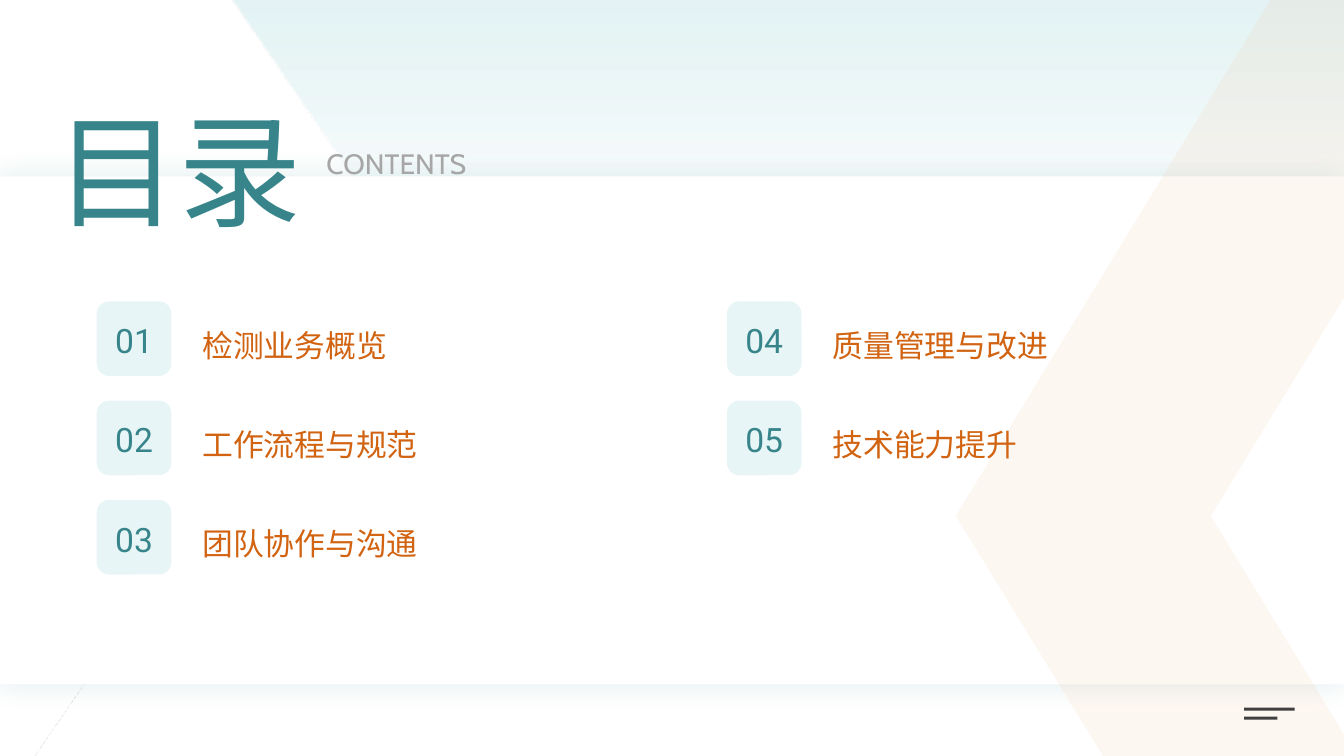
import pptx
import pptx.dml.color
import pptx.enum.shapes
import pptx.enum.text
import pptx.oxml
import pptx.oxml.ns
import pptx.util
import lxml.etree

Inches = pptx.util.Inches
Pt = pptx.util.Pt
RGBColor = pptx.dml.color.RGBColor
MSO_SHAPE = pptx.enum.shapes.MSO_SHAPE
MSO_ANCHOR = pptx.enum.text.MSO_ANCHOR
PP_ALIGN = pptx.enum.text.PP_ALIGN
qn = pptx.oxml.ns.qn

WHITE = RGBColor(0xFF, 0xFF, 0xFF)
TEAL = RGBColor(0x37, 0x85, 0x8B)
MIST = RGBColor(0xD2, 0xEB, 0xED)
BADGE = RGBColor(0xE8, 0xF5, 0xF6)
PEACH = RGBColor(0xF6, 0xBF, 0x96)
ORANGE = RGBColor(0xD1, 0x63, 0x11)
GREY = RGBColor(0xA6, 0xA6, 0xA6)
DARK = RGBColor(0x40, 0x40, 0x40)


def paint(shape, color, *opacities):
    shape.shadow.inherit = False
    shape.line.fill.background()
    if color is not None:
        shape.fill.solid()
        shape.fill.fore_color.rgb = color
    for tint, opacity in zip(shape.element.spPr.iter(qn("a:srgbClr")), opacities):
        lxml.etree.SubElement(tint, qn("a:alpha"), val=str(opacity * 1000))


def write(shape, text, font_name, size, color, spacing, anchor, alignment=PP_ALIGN.LEFT):
    frame = shape.text_frame
    frame.text = text
    frame.word_wrap = True
    frame.auto_size = pptx.enum.text.MSO_AUTO_SIZE.NONE
    frame.vertical_anchor = anchor
    paragraph = frame.paragraphs[0]
    paragraph.alignment = alignment
    paragraph.line_spacing = spacing
    paragraph.font.name = font_name
    paragraph.font.size = Pt(size)
    paragraph.font.color.rgb = color


presentation = pptx.Presentation()
presentation.slide_width = Inches(13.33)
presentation.slide_height = Inches(7.5)
slide = presentation.slides.add_slide(presentation.slide_layouts[5])
shapes = slide.shapes

backdrop_points = [(13.33, 0), (2.3, 0), (3.9, 2.34), (0.36, 7.5), (0.12, 7.5), (13.33, 7.5)]
chevron_points = [(15.13, 0), (12.6, 0), (9.48, 5.12), (10.94, 7.5), (13.46, 7.5), (12.01, 5.12)]
outlines = []
for points in (backdrop_points, chevron_points):
    corners = [(Inches(x), Inches(y)) for x, y in points]
    builder = shapes.build_freeform(*corners[0])
    builder.add_line_segments(corners[1:], close=True)
    outlines.append(builder.convert_to_shape())
backdrop, chevron = outlines

backdrop.fill.gradient()
backdrop.fill.gradient_angle = 270
for stop, position, color in zip(backdrop.fill.gradient_stops, (0, 0.3), (MIST, WHITE)):
    stop.position = position
    stop.color.rgb = color
paint(backdrop, None, 60, 80)

panel = shapes.add_shape(MSO_SHAPE.RECTANGLE, 0, Inches(1.75), Inches(13.33), Inches(5.04))
paint(panel, WHITE)
effects = panel.element.spPr.find(qn("a:effectLst"))
glow = lxml.etree.SubElement(
    effects, qn("a:outerShdw"), blurRad=str(Pt(20)), dist="0", dir="0", algn="ctr", rotWithShape="0"
)
glow_color = lxml.etree.SubElement(glow, qn("a:srgbClr"), val=str(TEAL))
lxml.etree.SubElement(glow_color, qn("a:alpha"), val="15000")

paint(chevron, PEACH, 12)
panel.element.addnext(chevron.element)

title = shapes.title
title.left, title.top = Inches(0.45), Inches(0.74)
title.width, title.height = Inches(2.68), Inches(1.68)
write(title, "目录", "Roboto", 88, TEAL, 1.1, MSO_ANCHOR.TOP)
chevron.element.addnext(title.element)

subtitle = shapes.add_textbox(Inches(3.14), Inches(1.29), Inches(2.23), Inches(0.52))
write(subtitle, "CONTENTS", "Cabin", 20, GREY, 1.35, MSO_ANCHOR.TOP)

for top, width in ((7.02, 0.5), (7.11, 0.33)):
    bar = shapes.add_shape(
        MSO_SHAPE.RECTANGLE, Inches(12.34), Inches(top), Inches(width), Inches(0.03)
    )
    paint(bar, DARK)

chapters = ["检测业务概览", "工作流程与规范", "团队协作与沟通", "质量管理与改进", "技术能力提升"]
for index, chapter in enumerate(chapters):
    column, row = divmod(index, 3)
    left = 0.96 + 6.25 * column
    top = 2.99 + 0.985 * row
    badge = shapes.add_shape(
        MSO_SHAPE.ROUNDED_RECTANGLE, Inches(left), Inches(top), Inches(0.74), Inches(0.74)
    )
    paint(badge, BADGE)
    label = shapes.add_textbox(Inches(left + 0.95), Inches(top - 0.05), Inches(4.43), Inches(0.85))
    write(label, chapter, "Roboto", 22, ORANGE, 1.3, MSO_ANCHOR.MIDDLE)
    number = shapes.add_textbox(Inches(left), Inches(top + 0.08), Inches(0.74), Inches(0.57))
    write(number, f"{index + 1:02}", "Roboto", 24, TEAL, 1.1, MSO_ANCHOR.MIDDLE, PP_ALIGN.CENTER)

presentation.save("out.pptx")
